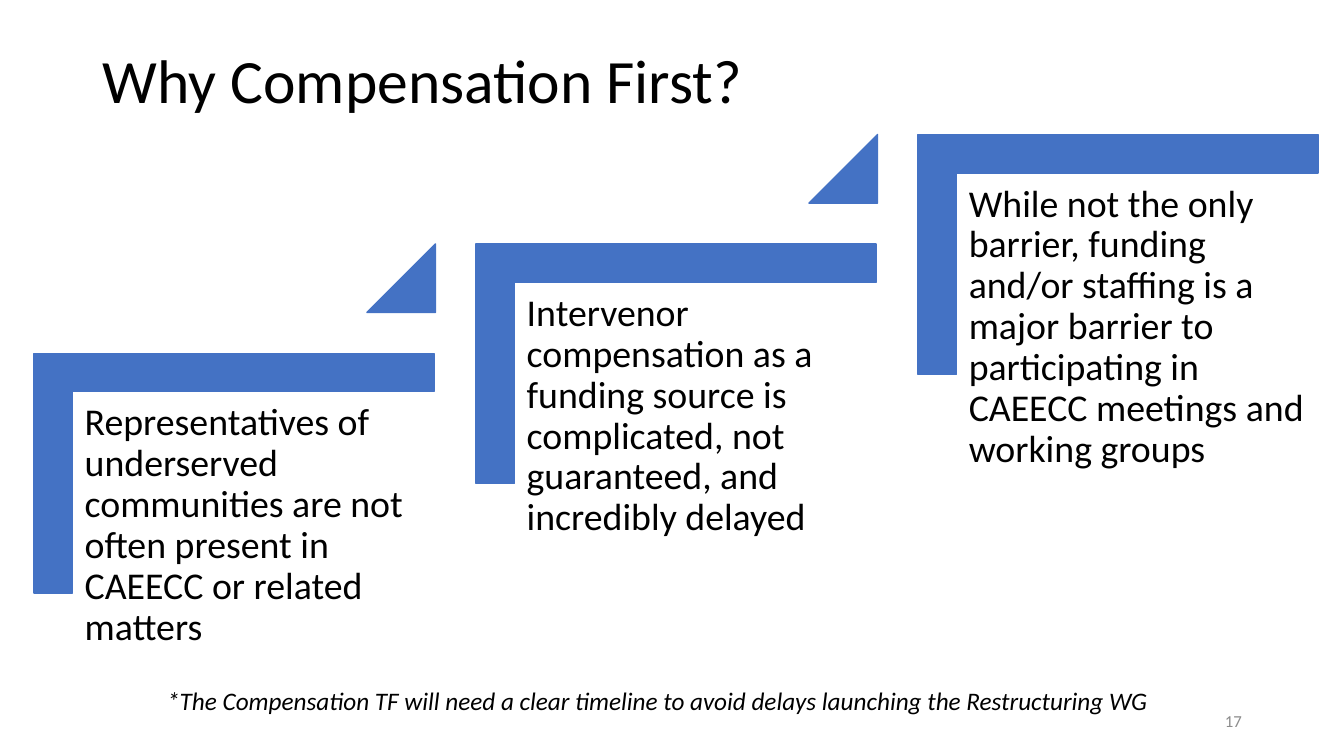
from dataclasses import dataclass

from pptx import Presentation
from pptx.dml.color import RGBColor
from pptx.enum.shapes import MSO_SHAPE
from pptx.enum.text import MSO_ANCHOR, MSO_AUTO_SIZE, PP_ALIGN
from pptx.shapes.autoshape import Shape
from pptx.slide import Slide
from pptx.util import Inches, Pt

CORNER = MSO_SHAPE.CORNER
TRIANGLE = MSO_SHAPE.ISOSCELES_TRIANGLE
TOP, MIDDLE = MSO_ANCHOR.TOP, MSO_ANCHOR.MIDDLE
NO_FIT = MSO_AUTO_SIZE.NONE
LEFT, CENTER, RIGHT = PP_ALIGN.LEFT, PP_ALIGN.CENTER, PP_ALIGN.RIGHT

WIDTH, HEIGHT = Inches(13.33), Inches(7.5)
COL, ROW = WIDTH / 100, HEIGHT / 100
FONT = "Calibri"
BLACK, GRAY, BLUE = "000000", "8C8C8C", "4472C4"


@dataclass(frozen=True)
class Box:
    left: float
    top: float
    width: float
    height: float

    def shifted(self, cols: float, rows: float) -> "Box":
        return Box(self.left + cols, self.top + rows, self.width, self.height)

    def emu(self) -> tuple[int, int, int, int]:
        return (round(self.left * COL), round(self.top * ROW),
                round(self.width * COL), round(self.height * ROW))


@dataclass(frozen=True)
class TextStyle:
    size: int
    color: str = BLACK
    align: PP_ALIGN = LEFT
    anchor: MSO_ANCHOR = TOP
    spacing: float = 1.0
    italic: bool = False


TITLE_BOX = Box(6.9, 5.33, 86.25, 11.47)
CORNER_BOX = Box(8.48, 36.13, 17.85, 52.93)
REASON_BOX = Box(5.48, 51.87, 26.85, 41.87)
TRIANGLE_BOX = Box(27.3, 32.27, 5.1, 9.07)
NUMBER_BOX = Box(70.65, 92.67, 22.5, 5.33)
NOTE_BOX = Box(2.85, 90, 92.18, 5.33)
STEP_COLS, STEP_ROWS = 32.89, -14.47
INSET = 0.82
CORNER_THICKNESS = 0.16

TITLE_STYLE = TextStyle(44, anchor=MIDDLE, spacing=0.9)
REASON_STYLE = TextStyle(27, spacing=0.9)
NUMBER_STYLE = TextStyle(12, GRAY, RIGHT, MIDDLE)
NOTE_STYLE = TextStyle(18, align=CENTER, italic=True)

REASONS = (
    "Representatives of underserved communities are not often present in CAEECC or related matters",
    "Intervenor compensation as a funding source is complicated, not guaranteed, and incredibly delayed",
    "While not the only barrier, funding and/or staffing is a major barrier to participating in "
    "CAEECC meetings and working groups",
)


def rgb(color: str) -> RGBColor:
    return RGBColor.from_string(color)


def write(sp: Shape, text: str, style: TextStyle) -> None:
    tf = sp.text_frame
    tf.word_wrap = True
    tf.auto_size = NO_FIT
    tf.vertical_anchor = style.anchor
    p = tf.paragraphs[0]
    p.alignment = style.align
    p.line_spacing = style.spacing
    r = p.add_run()
    r.text = text
    r.font.name = FONT
    r.font.size = Pt(style.size)
    r.font.italic = style.italic
    r.font.color.rgb = rgb(style.color)


def add_text(s: Slide, box: Box, text: str, style: TextStyle) -> Shape:
    sp = s.shapes.add_textbox(*box.emu())
    write(sp, text, style)
    return sp


def add_blue_shape(s: Slide, kind: MSO_SHAPE, box: Box) -> Shape:
    sp = s.shapes.add_shape(kind, *box.emu())
    sp.shadow.inherit = False
    sp.fill.solid()
    sp.fill.fore_color.rgb = rgb(BLUE)
    sp.line.color.rgb = rgb(BLUE)
    sp.line.width = Pt(1)
    return sp


def add_step(s: Slide, index: int, reason: str) -> None:
    shift = (index * STEP_COLS, index * STEP_ROWS)
    corner = add_blue_shape(s, CORNER, CORNER_BOX.shifted(*shift))
    corner.rotation = 90
    for i in range(2):
        corner.adjustments[i] = CORNER_THICKNESS
    tf = add_text(s, REASON_BOX.shifted(*shift), reason, REASON_STYLE).text_frame
    tf.margin_left = tf.margin_right = tf.margin_top = tf.margin_bottom = round(INSET * COL)
    if index < len(REASONS) - 1:
        triangle = add_blue_shape(s, TRIANGLE, TRIANGLE_BOX.shifted(*shift))
        triangle.adjustments[0] = 1


def main() -> None:
    prs = Presentation()
    prs.slide_width, prs.slide_height = WIDTH, HEIGHT
    s = prs.slides.add_slide(prs.slide_layouts[5])
    title = s.shapes.title
    title.left, title.top, title.width, title.height = TITLE_BOX.emu()
    write(title, "Why Compensation First?", TITLE_STYLE)
    for index, reason in enumerate(REASONS):
        add_step(s, index, reason)
    add_text(s, NUMBER_BOX, "17", NUMBER_STYLE)
    add_text(s, NOTE_BOX, "*The Compensation TF will need a clear timeline to avoid delays "
             "launching the Restructuring WG", NOTE_STYLE)
    prs.save("out.pptx")


if __name__ == "__main__":
    main()
